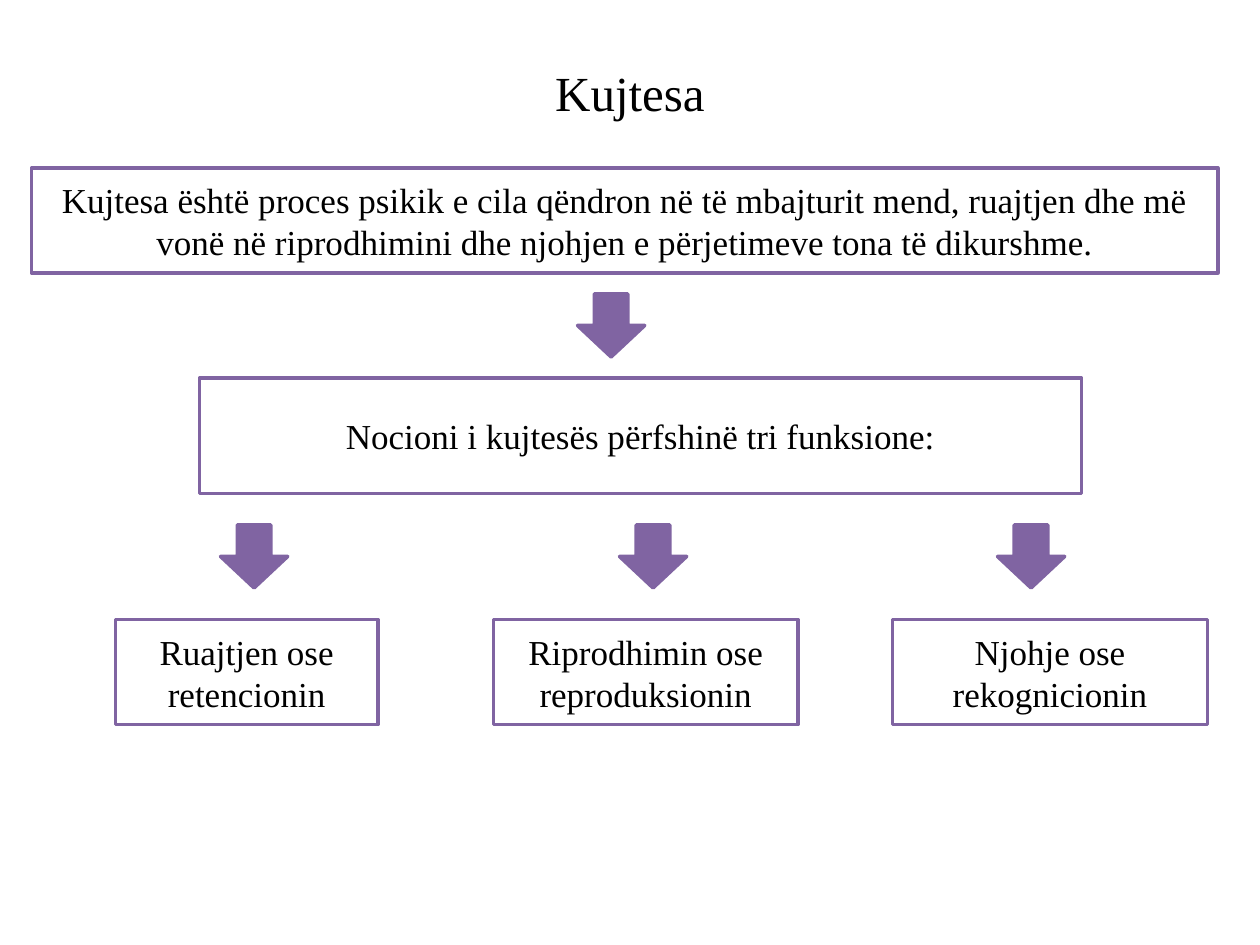
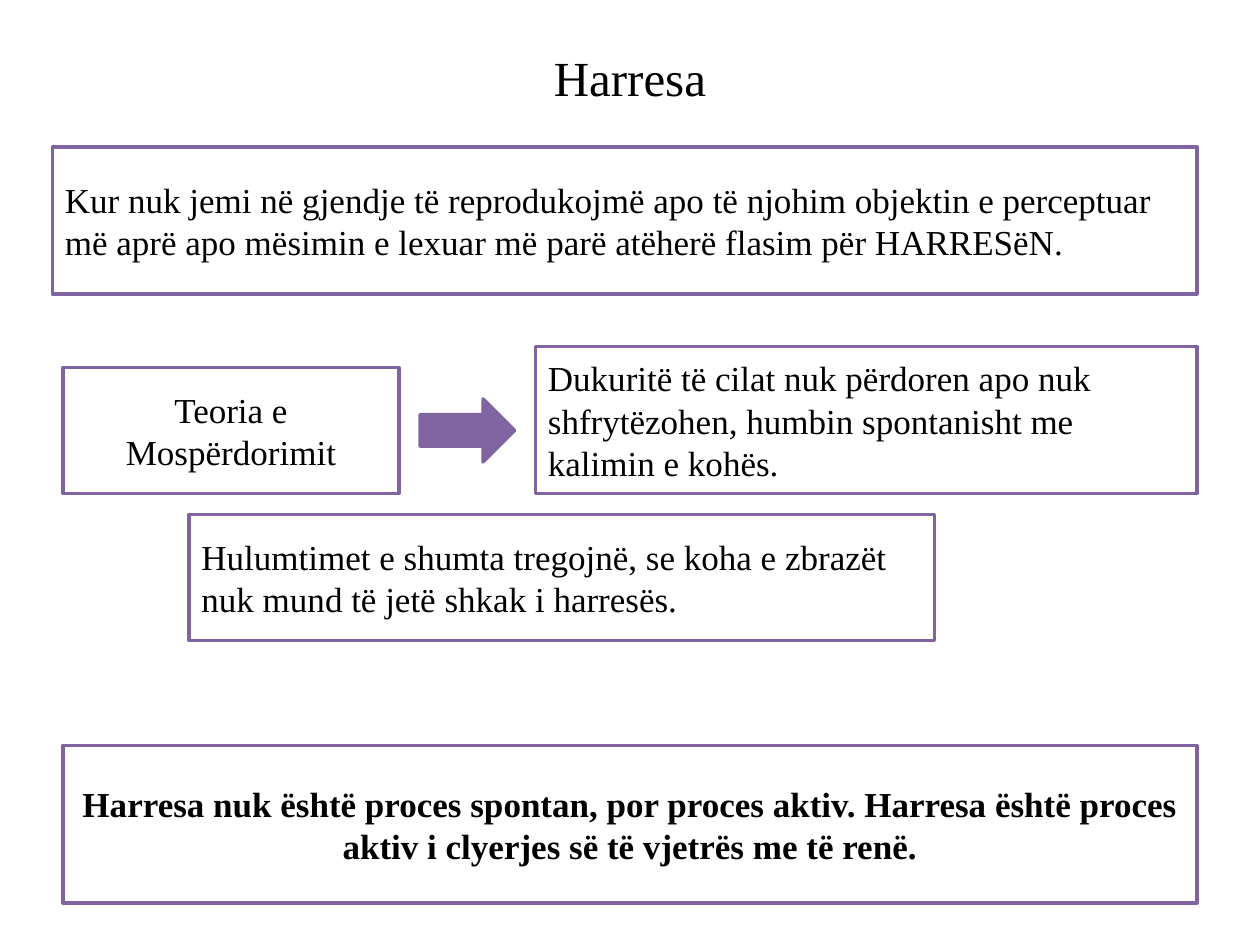
import dataclasses

import pptx
import pptx.dml.color
import pptx.enum.shapes
import pptx.enum.text
import pptx.util

SHAPE = pptx.enum.shapes.MSO_SHAPE
ALIGN = pptx.enum.text.PP_ALIGN
MIDDLE = pptx.enum.text.MSO_ANCHOR.MIDDLE


@dataclasses.dataclass(frozen=True)
class Theme:
    font: str = "Times New Roman"
    ink: pptx.dml.color.RGBColor = pptx.dml.color.RGBColor.from_string("000000")
    accent: pptx.dml.color.RGBColor = pptx.dml.color.RGBColor.from_string("8064A2")
    title_size: pptx.util.Length = pptx.util.Pt(28)
    text_size: pptx.util.Length = pptx.util.Pt(20)
    outline: pptx.util.Length = pptx.util.Pt(2)


theme = Theme()
deck = pptx.Presentation()
deck.slide_width = pptx.util.Inches(10)
deck.slide_height = pptx.util.Inches(7.5)
CELL = deck.slide_width / 120


def write(shape, text, size, align=ALIGN.CENTER, bold=False):
    frame = shape.text_frame
    frame.text = text
    frame.word_wrap = True
    frame.vertical_anchor = MIDDLE
    frame.paragraphs[0].alignment = align
    font = frame.paragraphs[0].runs[0].font
    font.name, font.size, font.bold = theme.font, size, bold
    font.color.rgb = theme.ink


def add_block(slide, kind, column, row, columns, rows):
    block = slide.shapes.add_shape(
        kind, *(round(n * CELL) for n in (column, row, columns, rows)))
    block.shadow.inherit = False
    block.line.color.rgb = theme.accent
    block.line.width = theme.outline
    if kind == SHAPE.RECTANGLE:
        block.fill.background()
    else:
        block.fill.solid()
        block.fill.fore_color.rgb = theme.accent
    return block


memory, forgetting = (deck.slides.add_slide(deck.slide_layouts[5]) for _ in range(2))
for slide, heading, rows in ((memory, "Kujtesa", 10.4), (forgetting, "Harresa", 7.4)):
    title = slide.shapes.title
    title.left, title.top, title.width, title.height = (
        round(n * CELL) for n in (6, 3.6, 108, rows))
    write(title, heading, theme.title_size)

ARROW_COLUMNS, ARROW_ROWS = 6.4, 6
FUNCTION_ROW, FUNCTION_ARROW_ROW = 59, 50

definition = add_block(memory, SHAPE.RECTANGLE, 3, 16, 113, 10)
write(definition, "Kujtesa është proces psikik e cila qëndron në të mbajturit mend, "
      "ruajtjen dhe më vonë në riprodhimini dhe njohjen e përjetimeve tona të dikurshme.",
      theme.text_size)
add_block(memory, SHAPE.DOWN_ARROW, 55, 28, ARROW_COLUMNS, ARROW_ROWS)
notion = add_block(memory, SHAPE.RECTANGLE, 19, 36, 84, 11)
write(notion, "Nocioni i kujtesës përfshinë tri funksione:", theme.text_size)

for name, column, columns, arrow_column in (
    ("Ruajtjen ose retencionin", 11, 25, 21),
    ("Riprodhimin ose reproduksionin", 47, 29, 59),
    ("Njohje ose rekognicionin", 85, 30, 95),
):
    add_block(memory, SHAPE.DOWN_ARROW, arrow_column, FUNCTION_ARROW_ROW,
              ARROW_COLUMNS, ARROW_ROWS)
    function = add_block(memory, SHAPE.RECTANGLE, column, FUNCTION_ROW, columns, 10)
    write(function, name, theme.text_size)

add_block(forgetting, SHAPE.RIGHT_ARROW, 40, 38, 9, ARROW_ROWS)
for statement, cells, align, bold in (
    ("Kur nuk jemi në gjendje të reprodukojmë apo të njohim objektin e perceptuar "
     "më aprë apo mësimin e lexuar më parë atëherë flasim për HARRESëN.",
     (5, 14, 109, 14), ALIGN.LEFT, False),
    ("Teoria e Mospërdorimit", (6, 35, 32, 12), ALIGN.CENTER, False),
    ("Dukuritë të cilat nuk përdoren apo nuk shfrytëzohen, humbin spontanisht me "
     "kalimin e kohës.", (51, 33, 63, 14), ALIGN.LEFT, False),
    ("Hulumtimet e shumta tregojnë, se koha e zbrazët nuk mund të jetë shkak i harresës.",
     (18, 49, 71, 12), ALIGN.LEFT, False),
    ("Harresa nuk është proces spontan, por proces aktiv. Harresa është proces aktiv "
     "i clyerjes së të vjetrës me të renë.", (6, 71, 108, 15), ALIGN.CENTER, True),
):
    write(add_block(forgetting, SHAPE.RECTANGLE, *cells), statement,
          theme.text_size, align, bold)

deck.save("out.pptx")
